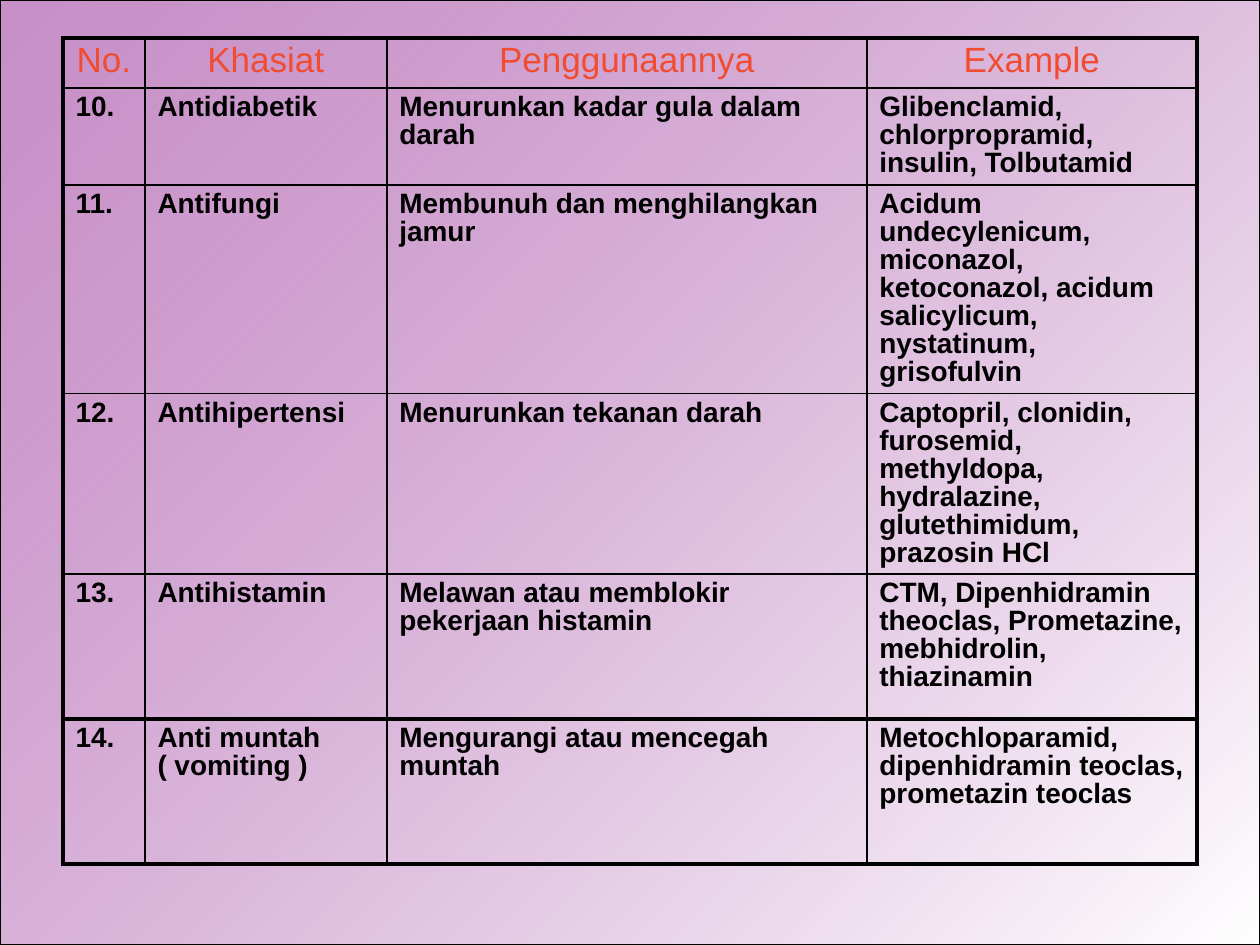
from dataclasses import dataclass

from lxml.etree import SubElement
from pptx import Presentation
from pptx.dml.color import RGBColor
from pptx.enum.shapes import MSO_SHAPE
from pptx.enum.text import PP_ALIGN
from pptx.oxml import parse_xml
from pptx.oxml.ns import nsdecls, qn
from pptx.util import Inches, Pt

THIN, THICK = 1, 2.25
COLUMN_WIDTHS = [0.65, 1.92, 3.81, 2.62]
HEADINGS = ["No.", "Khasiat", "Penggunaannya", "Example"]
HEADER_HEIGHT = 0.4


@dataclass
class DrugClass:
    number: str
    effect: str
    usage: str
    examples: str
    height: float

    def texts(self) -> list[str]:
        return [self.number, self.effect, self.usage, self.examples]


@dataclass
class TextFormat:
    font: dict
    color: str
    alignment: PP_ALIGN


HEADER_FORMAT = TextFormat({"name": "Arial", "size": Pt(20), "bold": False}, "F24C30", PP_ALIGN.CENTER)
ENTRY_FORMAT = TextFormat({"name": "Arial", "size": Pt(16), "bold": True}, "000000", PP_ALIGN.LEFT)

DRUG_CLASSES = [
    DrugClass("10.", "Antidiabetik", "Menurunkan kadar gula dalam darah",
              "Glibenclamid, chlorpropramid, insulin, Tolbutamid", 0.77),
    DrugClass("11.", "Antifungi", "Membunuh dan menghilangkan jamur",
              "Acidum undecylenicum, miconazol, ketoconazol, acidum salicylicum, "
              "nystatinum, grisofulvin", 1.65),
    DrugClass("12.", "Antihipertensi", "Menurunkan tekanan darah",
              "Captopril, clonidin, furosemid, methyldopa, hydralazine, "
              "glutethimidum, prazosin HCl", 1.43),
    DrugClass("13.", "Antihistamin", "Melawan atau memblokir pekerjaan histamin",
              "CTM, Dipenhidramin theoclas, Prometazine, mebhidrolin, thiazinamin", 1.15),
    DrugClass("14.", "Anti muntah ( vomiting )", "Mengurangi atau mencegah muntah",
              "Metochloparamid, dipenhidramin teoclas, prometazin teoclas", 1.15),
]


def rgb(value: str) -> RGBColor:
    return RGBColor.from_string(value)


def set_attributes(target, values: dict) -> None:
    for attribute, value in values.items():
        setattr(target, attribute, value)


def draw_backdrop(slide, width: int, height: int) -> None:
    backdrop = slide.shapes.add_shape(MSO_SHAPE.RECTANGLE, 0, 0, width, height)
    backdrop.shadow.inherit = False
    backdrop.fill.gradient()
    backdrop.fill.gradient_angle = 315
    fades = [("800080", 0, 44), ("FFFFFF", 1, 67)]
    for stop, (color, position, opacity) in zip(backdrop.fill.gradient_stops, fades):
        stop.color.rgb = rgb(color)
        stop.position = position
    color_elements = backdrop.element.spPr.findall(".//" + qn("a:gs") + "/" + qn("a:srgbClr"))
    for element, (_, _, opacity) in zip(color_elements, fades):
        SubElement(element, qn("a:alpha"), val=str(opacity * 1000))
    backdrop.line.color.rgb = rgb("000000")
    backdrop.line.width = Pt(0.75)


def set_borders(cell, widths: dict[str, float]) -> None:
    properties = cell._tc.get_or_add_tcPr()
    for index, (side, width) in enumerate(widths.items()):
        border = parse_xml(
            f'<a:ln{side} {nsdecls("a")} w="{int(Pt(width))}" cap="flat" cmpd="sng">'
            '<a:solidFill><a:srgbClr val="000000"/></a:solidFill>'
            f'<a:prstDash val="solid"/></a:ln{side}>')
        properties.insert(index, border)


def fill_cell(cell, text: str, text_format: TextFormat) -> None:
    cell.fill.background()
    paragraph = cell.text_frame.paragraphs[0]
    set_attributes(paragraph, {"alignment": text_format.alignment, "line_spacing": 0.9})
    run = paragraph.add_run()
    run.text = text
    set_attributes(run.font, text_format.font)
    run.font.color.rgb = rgb(text_format.color)


def draw_table(slide, drug_classes: list[DrugClass]) -> None:
    contents = [HEADINGS] + [entry.texts() for entry in drug_classes]
    heights = [HEADER_HEIGHT] + [entry.height for entry in drug_classes]
    last_row, last_column = len(heights) - 1, len(COLUMN_WIDTHS) - 1
    table = slide.shapes.add_table(
        len(heights), len(COLUMN_WIDTHS), Inches(0.5), Inches(0.3),
        Inches(sum(COLUMN_WIDTHS)), Inches(sum(heights))).table
    set_attributes(table, {"first_row": False, "horz_banding": False})
    for column, width in zip(table.columns, COLUMN_WIDTHS):
        column.width = Inches(width)
    for r, (texts, height) in enumerate(zip(contents, heights)):
        table.rows[r].height = Inches(height)
        for c, text in enumerate(texts):
            cell = table.cell(r, c)
            fill_cell(cell, text, ENTRY_FORMAT if r else HEADER_FORMAT)
            set_borders(cell, {
                "L": THICK if c == 0 else THIN,
                "R": THICK if c == last_column else THIN,
                "T": THICK if r in (0, last_row) else THIN,
                "B": THICK if r >= last_row - 1 else THIN,
            })


def main() -> None:
    presentation = Presentation()
    set_attributes(presentation, {"slide_width": Inches(10), "slide_height": Inches(7.5)})
    slide = presentation.slides.add_slide(presentation.slide_layouts[6])
    draw_backdrop(slide, presentation.slide_width, presentation.slide_height)
    draw_table(slide, DRUG_CLASSES)
    presentation.save("out.pptx")


if __name__ == "__main__":
    main()
